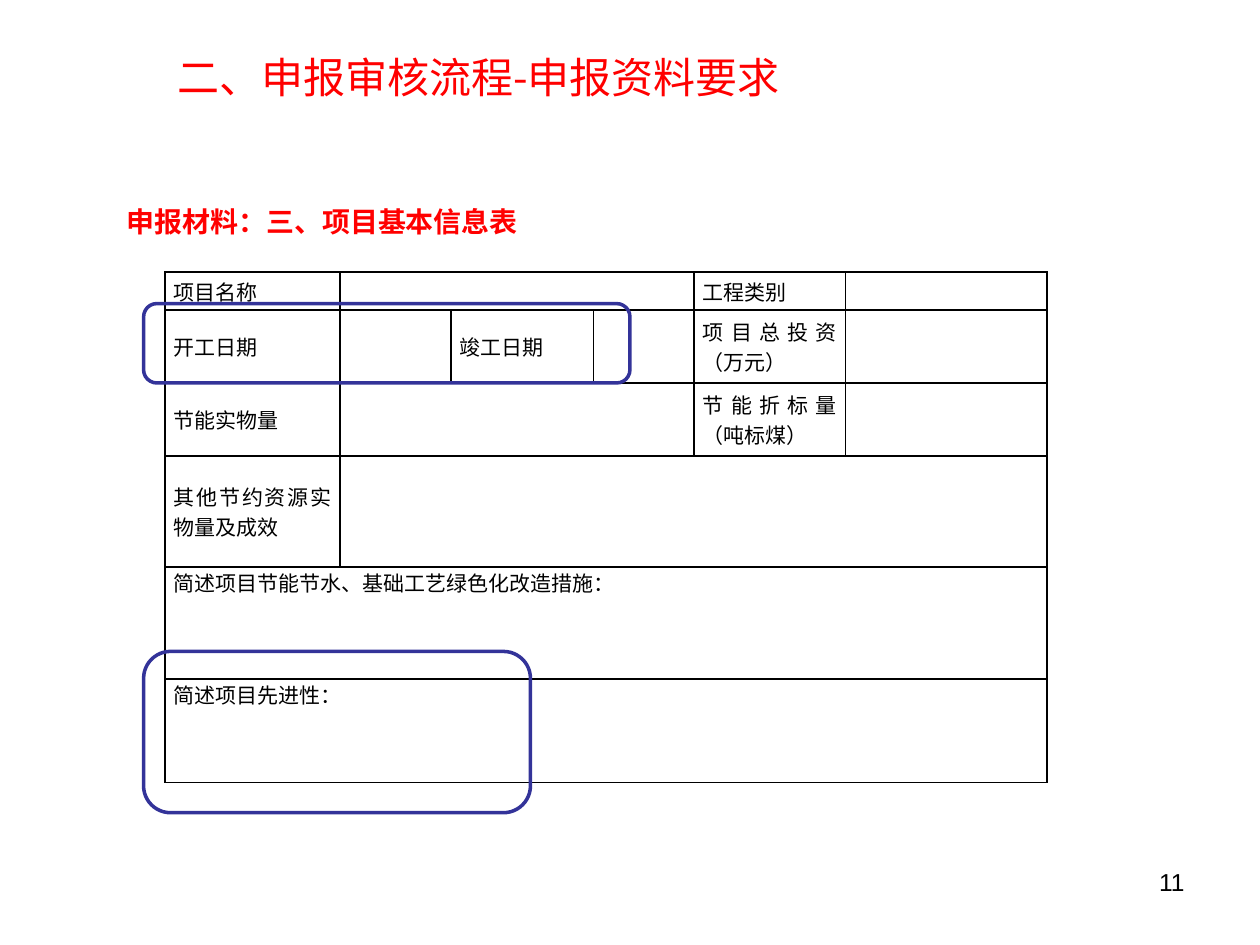
from lxml import etree
from pptx import Presentation
from pptx import util as u
from pptx.dml.color import RGBColor
from pptx.enum import shapes, text
from pptx.oxml import parse_xml
from pptx.oxml.ns import nsdecls, qn

BLACK = RGBColor(0, 0, 0)
RED = RGBColor(255, 0, 0)
BLUE = RGBColor(0x33, 0x33, 0x99)
CJK = "Noto Sans CJK SC"
MIDDLE = text.MSO_ANCHOR.MIDDLE
TOP = text.MSO_ANCHOR.TOP


def write(frame, words, size=12, font="Arial", color=BLACK, bold=False,
          align=text.PP_ALIGN.LEFT, anchor=TOP):
    frame.word_wrap = True
    frame.vertical_anchor = anchor
    para = frame.paragraphs[0]
    para.alignment = align
    span = para.add_run()
    span.text = words
    span.font.size = u.Pt(size)
    span.font.name = font
    span.font.bold = bold
    span.font.color.rgb = color
    east_asian = etree.SubElement(span.font._element, qn("a:ea"))
    east_asian.set("typeface", CJK)
    return para


deck = Presentation()
deck.slide_width, deck.slide_height = u.Inches(10), u.Inches(7.5)
page = deck.slides.add_slide(deck.slide_layouts[6])

number = page.shapes.add_textbox(u.Inches(7.17), u.Inches(6.83), u.Inches(2.33), u.Inches(0.52))
write(number.text_frame, "11", size=14, align=text.PP_ALIGN.RIGHT)

title = page.shapes.add_textbox(u.Inches(1.31), u.Inches(0), u.Inches(9), u.Inches(1.22))
write(title.text_frame, "二、申报审核流程-申报资料要求", size=24, font=CJK, color=RED, anchor=MIDDLE)

column_widths = [1.39, 0.88, 1.13, 0.8, 1.2, 1.6]
row_heights = [0.29, 0.58, 0.58, 0.88, 0.89, 0.82]
labels = {
    (0, 0): "项目名称", (0, 4): "工程类别",
    (1, 0): "开工日期", (1, 2): "竣工日期", (1, 4): "项目总投资（万元）",
    (2, 0): "节能实物量", (2, 4): "节能折标量（吨标煤）",
    (3, 0): "其他节约资源实物量及成效",
    (4, 0): "简述项目节能节水、基础工艺绿色化改造措施：",
    (5, 0): "简述项目先进性：",
}
merges = [(0, 1, 3), (2, 1, 3), (3, 1, 5), (4, 0, 5), (5, 0, 5)]

table = page.shapes.add_table(
    len(row_heights), len(column_widths), u.Inches(1.31), u.Inches(2.16),
    u.Inches(sum(column_widths)), u.Inches(sum(row_heights))).table
table.first_row = False
table.horz_banding = False
for column, width in zip(table.columns, column_widths):
    column.width = u.Inches(width)
for row, height in zip(table.rows, row_heights):
    row.height = u.Inches(height)

for cell in table.iter_cells():
    cell.margin_left = cell.margin_right = u.Inches(0.07)
    cell.margin_top = cell.margin_bottom = 0
    cell.fill.background()
    for position, side in enumerate(("lnL", "lnR", "lnT", "lnB")):
        border = parse_xml(
            f'<a:{side} {nsdecls("a")} w="12700"><a:solidFill>'
            f'<a:srgbClr val="{BLACK}"/></a:solidFill></a:{side}>')
        cell._tc.get_or_add_tcPr().insert(position, border)

for row, first, last in merges:
    table.cell(row, first).merge(table.cell(row, last))
for (row, column), label in labels.items():
    cell = table.cell(row, column)
    write(cell.text_frame, label, align=text.PP_ALIGN.JUSTIFY)
    cell.vertical_anchor = MIDDLE if row < 4 else TOP

heading = page.shapes.add_textbox(u.Inches(0.91), u.Inches(1.45), u.Inches(3.46), u.Inches(0.47))
para = write(heading.text_frame, "申报材料：三、项目基本信息表", size=16, font=CJK,
             color=RED, bold=True, anchor=MIDDLE)
para.line_spacing = u.Pt(30)
para.space_after = u.Pt(6)

for top, width, height in [(2.41, 3.86, 0.63), (5.17, 3.07, 1.28)]:
    highlight = page.shapes.add_shape(
        shapes.MSO_SHAPE.ROUNDED_RECTANGLE,
        u.Inches(1.14), u.Inches(top), u.Inches(width), u.Inches(height))
    highlight.shadow.inherit = False
    highlight.fill.background()
    highlight.line.color.rgb = BLUE
    highlight.line.width = u.Pt(2)

deck.save("out.pptx")
